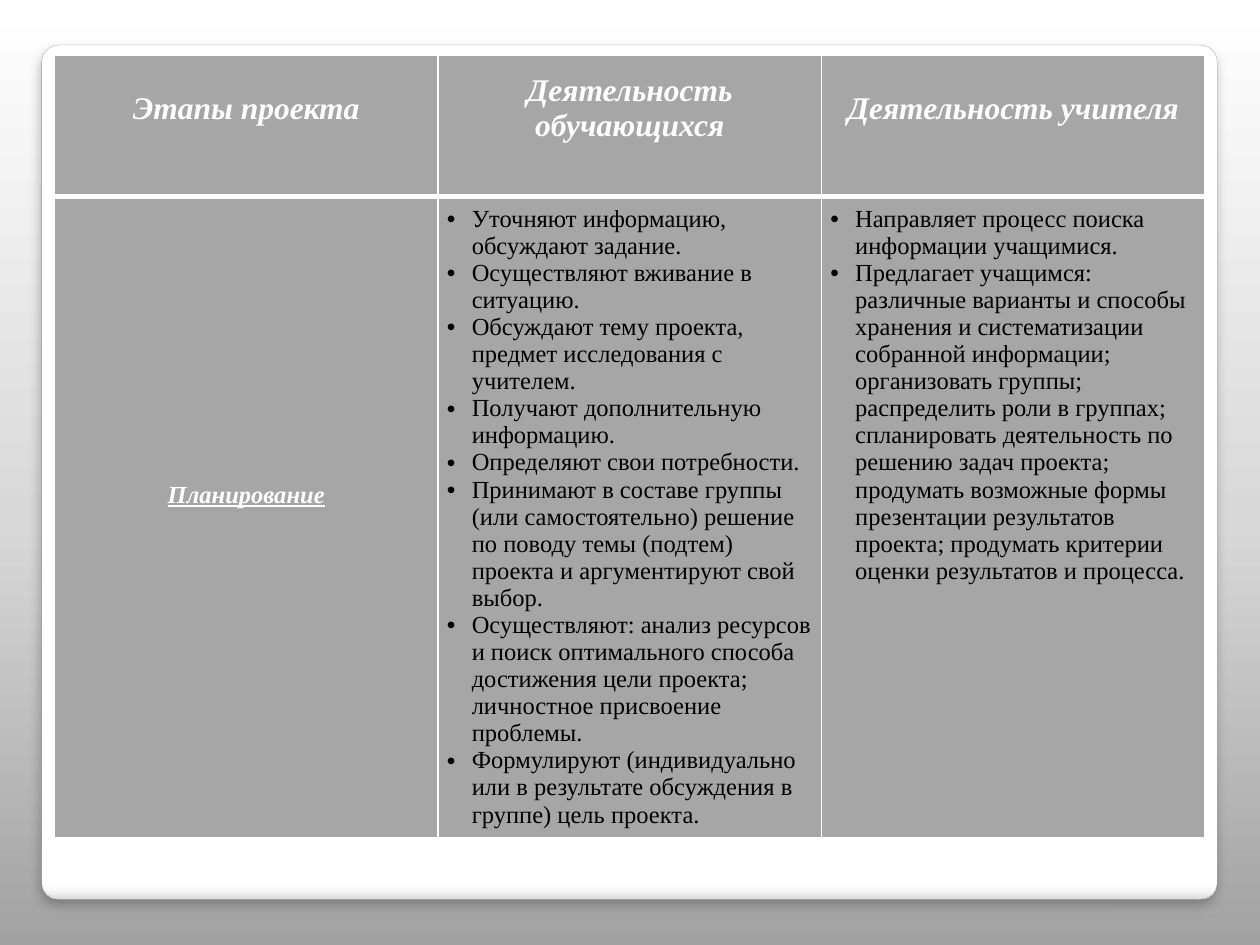
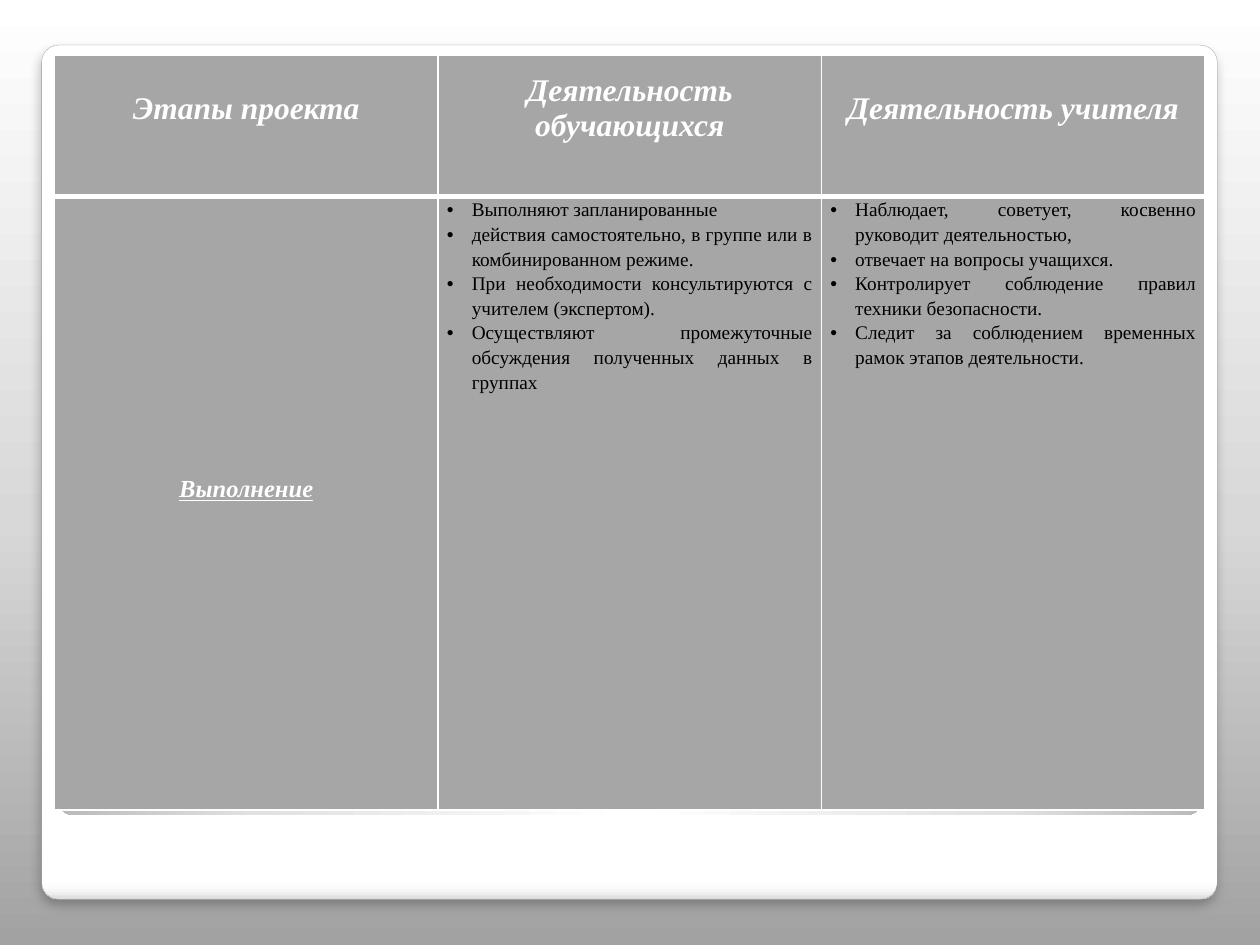
"""Build two slides with tables of project stages."""
import pptx
import pptx.dml.color
import pptx.enum.shapes
import pptx.enum.text
import pptx.oxml
import pptx.oxml.ns
import pptx.util

Cm, Pt = pptx.util.Cm, pptx.util.Pt
RGB = pptx.dml.color.RGBColor.from_string
ALIGN = pptx.enum.text.PP_ALIGN
ANCHOR = pptx.enum.text.MSO_ANCHOR
NS = pptx.oxml.ns.nsdecls("a")
COLORS = {"white": "FFFFFF", "black": "000000", "cell": "A6A6A6", "edge": "A4A4A4",
          "dark": "A2A2A2", "mid": "D8D8D8", "light": "E1E1E1", "pale": "F7F7F7", "rim": "DADADA"}
FONT = "Times New Roman"
HEADERS = ["Этапы проекта", "Деятельность обучающихся", "Деятельность учителя"]
STAGES = [
    {"name": "Планирование", "row": 12.9, "name_bottom": 1.07, "size": 14, "pad": 0.18,
     "align": ALIGN.LEFT, "spacing": 1.0,
     "lists": [
         ["Уточняют информацию, обсуждают задание.",
          "Осуществляют вживание в ситуацию.",
          "Обсуждают тему проекта, предмет исследования с учителем.",
          "Получают дополнительную информацию.",
          "Определяют свои потребности.",
          "Принимают в составе группы (или самостоятельно) решение по поводу темы (подтем) "
          "проекта и аргументируют свой выбор.",
          "Осуществляют: анализ ресурсов и поиск оптимального способа достижения цели проекта; "
          "личностное присвоение проблемы.",
          "Формулируют (индивидуально или в результате обсуждения в группе) цель проекта."],
         ["Направляет процесс поиска информации учащимися.",
          "Предлагает учащимся: различные варианты и способы хранения и систематизации "
          "собранной информации; организовать группы; распределить роли в группах; "
          "спланировать деятельность по решению задач проекта; продумать возможные формы "
          "презентации результатов проекта; продумать критерии оценки результатов и процесса."]]},
    {"name": "Выполнение", "row": 12.37, "name_bottom": 0.74, "size": 11, "pad": 0,
     "align": ALIGN.JUSTIFY, "spacing": 1.15,
     "lists": [
         ["Выполняют запланированные",
          "действия самостоятельно, в группе или в комбинированном режиме.",
          "При необходимости консультируются с учителем (экспертом).",
          "Осуществляют промежуточные обсуждения полученных данных в группах"],
         ["Наблюдает, советует, косвенно руководит деятельностью,",
          "отвечает на вопросы учащихся.",
          "Контролирует соблюдение правил техники безопасности.",
          "Следит за соблюдением временных рамок этапов деятельности."]]},
]


def set_gradient(fill, element, stops, direction):
    """Give a fill its gradient stops and direction."""
    fill.gradient()
    grad = element.find(".//" + pptx.oxml.ns.qn("a:gradFill"))
    for child in list(grad):
        grad.remove(child)
    gs = "".join(f'<a:gs pos="{pos * 1000}"><a:srgbClr val="{COLORS[c]}"/></a:gs>' for pos, c in stops)
    for xml in (f"<a:gsLst {NS}>{gs}</a:gsLst>", direction):
        grad.append(pptx.oxml.parse_xml(xml))


def fill_cell(cell, texts, size, color, align, bottom_line, **flags):
    """Write paragraphs into a cell and set its borders and fill."""
    tcPr = cell._tc.get_or_add_tcPr()
    for side, width in (("L", 1), ("R", 1), ("T", 1), ("B", bottom_line)):
        tcPr.append(pptx.oxml.parse_xml(
            f'<a:ln{side} {NS} w="{Pt(width)}"><a:solidFill><a:srgbClr val="{COLORS["white"]}"/>'
            f"</a:solidFill></a:ln{side}>"))
    cell.fill.solid()
    cell.fill.fore_color.rgb = RGB(COLORS["cell"])
    tf = cell.text_frame
    for i, text in enumerate(texts):
        p = tf.paragraphs[0] if i == 0 else tf.add_paragraph()
        p.text = text
        p.alignment = align
        p.font.name, p.font.size = FONT, Pt(size)
        p.font.color.rgb = RGB(COLORS[color])
        p.font.bold = p.font.italic = flags.get("emphasis", False)
        p.font.underline = flags.get("underline", False)


prs = pptx.Presentation()
prs.slide_width, prs.slide_height = Cm(25.4), Cm(19.05)

for stage in STAGES:
    s = prs.slides.add_slide(prs.slide_layouts[6])
    set_gradient(s.background.fill, s.element, [(0, "dark"), (45, "mid"), (100, "white")],
                 f'<a:lin {NS} ang="16200000" scaled="0"/>')

    rounded = pptx.enum.shapes.MSO_SHAPE.ROUNDED_RECTANGLE
    panel = s.shapes.add_shape(rounded, Cm(0.84), Cm(0.91), Cm(23.7), Cm(17.22))
    inset = s.shapes.add_shape(rounded, Cm(1.17), Cm(1.19), Cm(23.06), Cm(15.24))
    for sp in (panel, inset):
        sp.adjustments[0] = 0.02
        sp.shadow.inherit = False
    set_gradient(panel.fill, panel.element, [(0, "white"), (98, "white"), (99, "pale"), (100, "rim")],
                 f'<a:lin {NS} ang="5400000" scaled="0"/>')
    panel.line.color.rgb = RGB(COLORS["edge"])
    panel.line.width = Pt(0.16)
    panel.element.spPr.find(pptx.oxml.ns.qn("a:effectLst")).append(pptx.oxml.parse_xml(
        f'<a:outerShdw {NS} blurRad="{Pt(6)}" dist="{Pt(4)}" dir="5400000" algn="t" rotWithShape="0">'
        f'<a:srgbClr val="{COLORS["black"]}"><a:alpha val="25000"/></a:srgbClr></a:outerShdw>'))
    set_gradient(inset.fill, inset.element, [(0, "white"), (55, "light"), (100, "dark")],
                 f'<a:path {NS} path="circle"><a:fillToRect l="50000" t="175000" r="50000" b="-75000"/></a:path>')
    inset.line.fill.background()

    row_heights = [2.84, stage["row"]]
    table = s.shapes.add_table(2, 3, Cm(1.1), Cm(1.12), Cm(23.19), Cm(sum(row_heights))).table
    table.horz_banding = False
    for row, height in zip(table.rows, row_heights):
        row.height = Cm(height)
    for col, header in enumerate(HEADERS):
        table.columns[col].width = Cm(7.73)
        cell = table.cell(0, col)
        cell.vertical_anchor = ANCHOR.MIDDLE
        cell.margin_bottom = Cm(0.84)
        fill_cell(cell, [header], 18, "white", ALIGN.CENTER, 3, emphasis=True)

    cell = table.cell(1, 0)
    cell.vertical_anchor = ANCHOR.MIDDLE
    cell.margin_top, cell.margin_bottom = Cm(0.18), Cm(stage["name_bottom"])
    fill_cell(cell, [stage["name"]], 14, "white", ALIGN.CENTER, 1, emphasis=True, underline=True)

    for col, items in enumerate(stage["lists"], 1):
        cell = table.cell(1, col)
        cell.margin_left = cell.margin_right = Cm(0.18)
        cell.margin_top = cell.margin_bottom = Cm(stage["pad"])
        fill_cell(cell, items, stage["size"], "black", stage["align"], 1)
        for p in cell.text_frame.paragraphs:
            p.line_spacing = stage["spacing"]
            pPr = p._p.get_or_add_pPr()
            pPr.set("marL", str(Cm(0.5)))
            pPr.set("indent", str(-Cm(0.5)))
            defRPr = pPr.find(pptx.oxml.ns.qn("a:defRPr"))
            for xml in (f'<a:buFont {NS} typeface="Arial"/>', f'<a:buChar {NS} char="•"/>'):
                defRPr.addprevious(pptx.oxml.parse_xml(xml))

prs.save("out.pptx")
